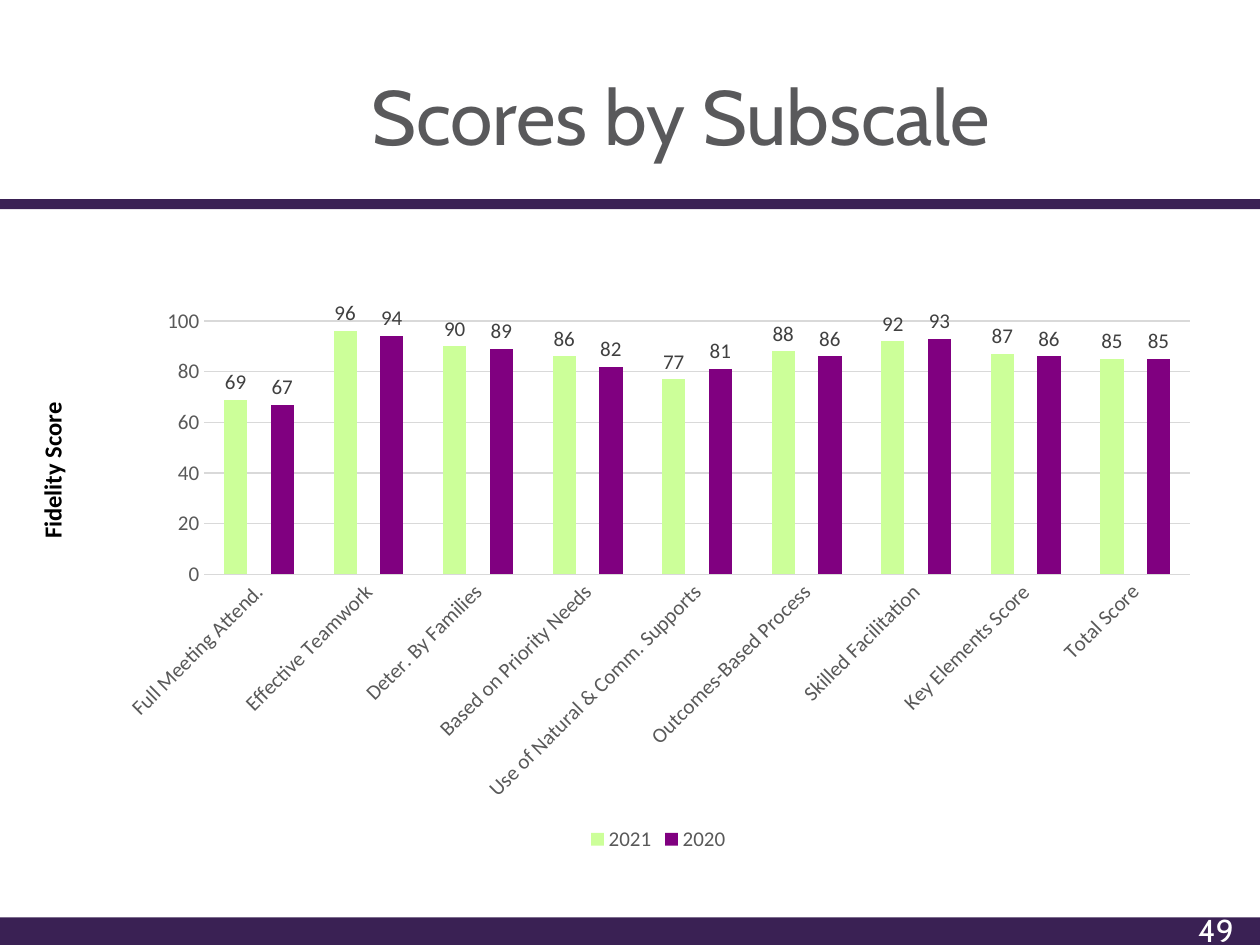
from dataclasses import dataclass

import pptx
import pptx.chart.data
import pptx.dml.color
import pptx.enum.chart
import pptx.enum.shapes
import pptx.enum.text
import pptx.util
from pptx.util import Inches

PURPLE_BAND = pptx.dml.color.RGBColor(0x3A, 0x21, 0x54)
TITLE_GREY = pptx.dml.color.RGBColor(0x59, 0x59, 0x5B)
AXIS_GREY = pptx.dml.color.RGBColor(0x59, 0x59, 0x59)
LABEL_GREY = pptx.dml.color.RGBColor(0x40, 0x40, 0x40)
GRID_GREY = pptx.dml.color.RGBColor(0xD9, 0xD9, 0xD9)
GREEN = pptx.dml.color.RGBColor(0xCC, 0xFF, 0x99)
PURPLE = pptx.dml.color.RGBColor(0x80, 0x00, 0x80)
WHITE = pptx.dml.color.RGBColor(0xFF, 0xFF, 0xFF)
BLACK = pptx.dml.color.RGBColor(0x00, 0x00, 0x00)

SUBSCALES = [
    "Full Meeting Attend.",
    "Effective Teamwork",
    "Deter. By Families",
    "Based on Priority Needs",
    "Use of Natural & Comm. Supports",
    "Outcomes-Based Process",
    "Skilled Facilitation",
    "Key Elements Score",
    "Total Score",
]


@dataclass(frozen=True)
class Band:
    top: float
    height: float


@dataclass(frozen=True)
class YearScores:
    year: str
    scores: tuple[int, ...]
    color: pptx.dml.color.RGBColor


BANDS = [Band(7.28, 0.22), Band(1.58, 0.08)]
YEARS = [
    YearScores("2021", (69, 96, 90, 86, 77, 88, 92, 87, 85), GREEN),
    YearScores("2020", (67, 94, 89, 82, 81, 86, 93, 86, 85), PURPLE),
]


def format_font(font, size: float, color, name: str = "Calibri", bold: bool = False) -> None:
    font.size = pptx.util.Pt(size)
    font.name = name
    font.bold = bold
    font.color.rgb = color


def write_text(shape, text: str, *, size: float, color, name: str = "Calibri",
               bold: bool = False, wrap: bool = True, margins=(0, 0, 0, 0),
               line_points: float | None = None, spacing: int = 0) -> None:
    frame = shape.text_frame
    frame.word_wrap = wrap
    frame.auto_size = pptx.enum.text.MSO_AUTO_SIZE.NONE
    frame.vertical_anchor = pptx.enum.text.MSO_ANCHOR.TOP
    frame.margin_left, frame.margin_top, frame.margin_right, frame.margin_bottom = map(Inches, margins)
    paragraph = frame.paragraphs[0]
    paragraph.alignment = pptx.enum.text.PP_ALIGN.LEFT
    if line_points:
        paragraph.line_spacing = pptx.util.Pt(line_points)
    run = paragraph.add_run()
    run.text = text
    format_font(run.font, size, color, name, bold)
    if spacing:
        run.font._element.set("spc", str(spacing))


def draw_band(slide, band: Band) -> None:
    stripe = slide.shapes.add_shape(
        pptx.enum.shapes.MSO_SHAPE.RECTANGLE, 0, Inches(band.top), Inches(10), Inches(band.height))
    stripe.shadow.inherit = False
    stripe.fill.solid()
    stripe.fill.fore_color.rgb = PURPLE_BAND
    stripe.line.fill.background()


def style_axes(chart) -> None:
    subscale_axis, score_axis = chart.category_axis, chart.value_axis
    for axis in (subscale_axis, score_axis):
        axis.major_tick_mark = pptx.enum.chart.XL_TICK_MARK.NONE
        axis.minor_tick_mark = pptx.enum.chart.XL_TICK_MARK.NONE
        format_font(axis.tick_labels.font, 12, AXIS_GREY)
    score_axis.minimum_scale = 0
    score_axis.maximum_scale = 100
    score_axis.major_unit = 20
    score_axis.tick_labels.number_format = "0"
    score_axis.tick_labels.number_format_is_linked = False
    score_axis.format.line.fill.background()
    score_axis.has_major_gridlines = True
    for line in (subscale_axis.format.line, score_axis.major_gridlines.format.line):
        line.color.rgb = GRID_GREY
        line.width = pptx.util.Pt(0.75)
    subscale_axis._element.txPr.bodyPr.set("rot", "-2700000")


def style_year(series, color) -> None:
    series.format.fill.solid()
    series.format.fill.fore_color.rgb = color
    series.invert_if_negative = False
    labels = series.data_labels
    labels.show_value = True
    labels.number_format = "0"
    labels.number_format_is_linked = False
    labels.position = pptx.enum.chart.XL_LABEL_POSITION.OUTSIDE_END
    format_font(labels.font, 12, LABEL_GREY)


def draw_scores(slide, years: list[YearScores]) -> None:
    data = pptx.chart.data.CategoryChartData(number_format="0")
    data.categories = SUBSCALES
    for entry in years:
        data.add_series(entry.year, entry.scores)
    chart = slide.shapes.add_chart(
        pptx.enum.chart.XL_CHART_TYPE.COLUMN_CLUSTERED,
        Inches(0.83), Inches(2.36), Inches(8.79), Inches(4.44), data).chart
    format_font(chart.font, 10, BLACK)
    chart.has_title = False
    chart.has_legend = True
    chart.legend.position = pptx.enum.chart.XL_LEGEND_POSITION.BOTTOM
    chart.legend.include_in_layout = False
    format_font(chart.legend.font, 12, AXIS_GREY)
    style_axes(chart)
    plot = chart.plots[0]
    plot.vary_by_categories = False
    plot.gap_width = 170
    plot.overlap = -100
    for series, entry in zip(plot.series, years):
        style_year(series, entry.color)


def main() -> None:
    deck = pptx.Presentation()
    deck.slide_width, deck.slide_height = Inches(10), Inches(7.5)
    slide = deck.slides.add_slide(deck.slide_layouts[5])

    for band in BANDS:
        draw_band(slide, band)

    title = slide.shapes.title
    title.left, title.top = Inches(2.94), Inches(0.52)
    title.width, title.height = Inches(6.41), Inches(0.76)
    write_text(title, "Scores by Subscale", size=44, color=TITLE_GREY, name="Cabin",
               margins=(0.01, 0.02, 0, 0), spacing=-10)

    page_number = slide.shapes.add_textbox(Inches(9.47), Inches(7.28), Inches(0.34), Inches(0.25))
    write_text(page_number, "49", size=18, color=WHITE, name="Cabin",
               margins=(0.04, 0, 0, 0), line_points=18.1)

    draw_scores(slide, YEARS)

    score_caption = slide.shapes.add_textbox(Inches(-0.23), Inches(3.56), Inches(1.29), Inches(0.34))
    score_caption.rotation = 270
    write_text(score_caption, "Fidelity Score", size=14, color=BLACK, bold=True,
               wrap=False, margins=(0.1, 0.05, 0.1, 0.05))

    deck.save("out.pptx")


if __name__ == "__main__":
    main()
